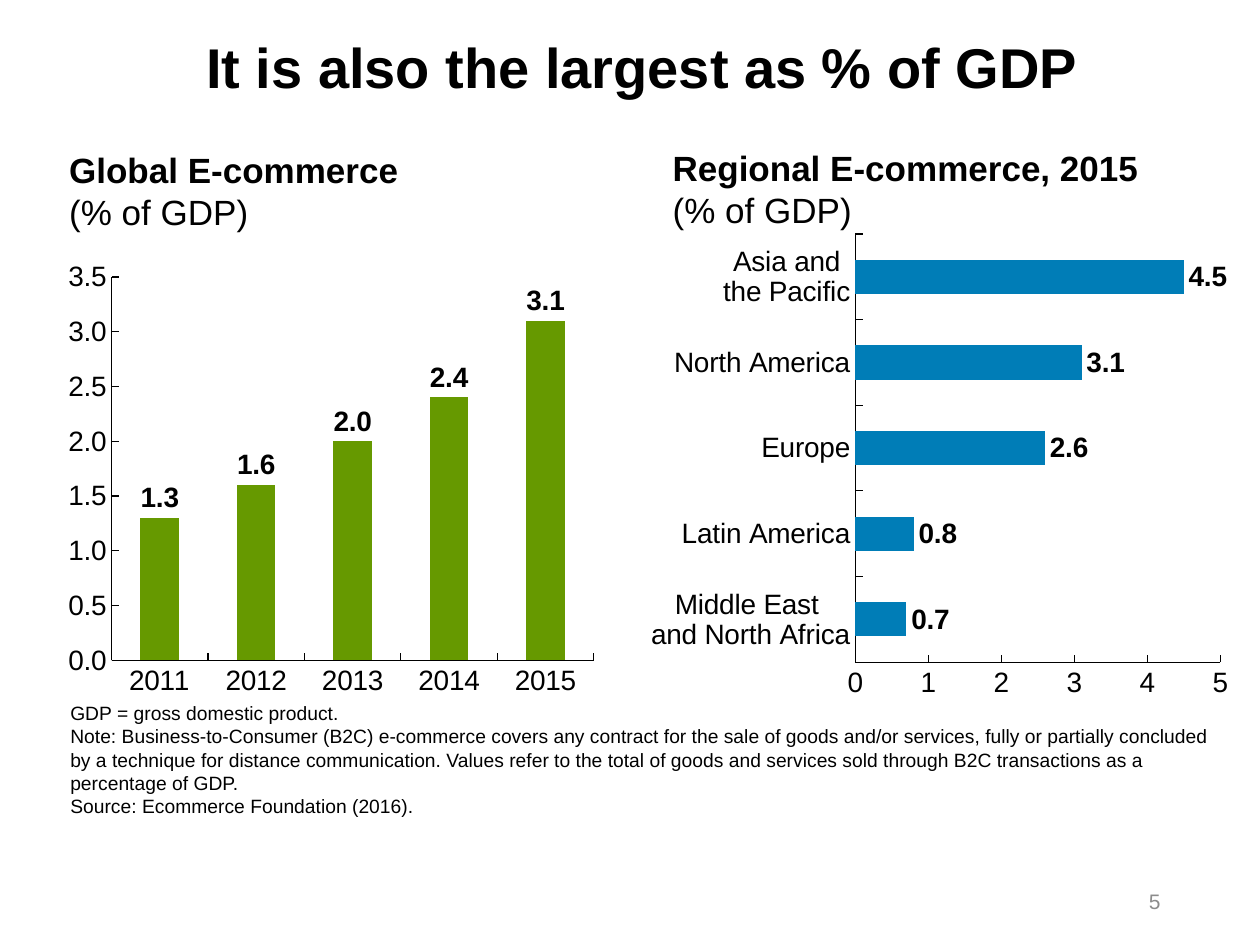
import pptx
import pptx.chart.data
import pptx.dml.color
import pptx.enum.chart
import pptx.enum.text
import pptx.oxml
import pptx.oxml.ns
import pptx.util

Pt = pptx.util.Pt
ALIGN = pptx.enum.text.PP_ALIGN
ANCHOR = pptx.enum.text.MSO_ANCHOR
CHART = pptx.enum.chart.XL_CHART_TYPE
LABEL = pptx.enum.chart.XL_LABEL_POSITION
TICK = pptx.enum.chart.XL_TICK_MARK

FONT = "Arial"
BLACK = "000000"
TITLE = "It is also the largest as % of GDP"
NOTES = [
    "GDP = gross domestic product.",
    "Note: Business-to-Consumer (B2C) e-commerce covers any contract for the sale of goods "
    "and/or services, fully or partially concluded by a technique for distance communication. "
    "Values refer to the total of goods and services sold through B2C transactions as a "
    "percentage of GDP.",
    "Source: Ecommerce Foundation (2016).",
]
PANELS = [
    {
        "heading": ["Global E-commerce", "(% of GDP)"],
        "heading_box": (32.4, 81.4, 327.6, 55.4),
        "kind": CHART.COLUMN_CLUSTERED,
        "box": (32.4, 145.4, 313.2, 257.8),
        "plot": {"x": 0.1, "y": 0.05, "w": 0.88, "h": 0.85},
        "values": {"2011": 1.3, "2012": 1.6, "2013": 2.0, "2014": 2.4, "2015": 3.1},
        "colour": "669900",
        "top": 3.5,
        "step": 0.5,
        "axis_format": "#,##0.0",
    },
    {
        "heading": ["Regional E-commerce, 2015", "(% of GDP)"],
        "heading_box": (377.3, 79.9, 329, 55.4),
        "kind": CHART.BAR_CLUSTERED,
        "box": (360, 128.2, 347.8, 275),
        "plot": {"x": 0.37, "y": 0.02, "w": 0.6, "h": 0.89},
        "values": {
            "Middle East\n and North Africa": 0.7,
            "Latin America": 0.8,
            "Europe": 2.6,
            "North America": 3.1,
            "Asia and\nthe Pacific": 4.5,
        },
        "colour": "007DB7",
        "top": 5,
        "step": 1,
        "axis_format": "0",
    },
]


def rgb(colour):
    return pptx.dml.color.RGBColor.from_string(colour)


def style(font, size, colour=BLACK, bold=False):
    font.name = FONT
    font.size = Pt(size)
    font.bold = bold
    font.color.rgb = rgb(colour)


def add_text(slide, box, lines, size, colour=BLACK, bold_first=False, align=ALIGN.LEFT):
    frame = slide.shapes.add_textbox(*map(Pt, box)).text_frame
    frame.word_wrap = True
    frame.text = "\n".join(lines)
    for index, paragraph in enumerate(frame.paragraphs):
        paragraph.alignment = align
        for run in paragraph.runs:
            style(run.font, size, colour, bold_first and index == 0)
    return frame


def place_plot(chart, plot):
    plot_area = chart.plots[0]._element.getparent()
    for old in plot_area.findall(pptx.oxml.ns.qn("c:layout")):
        plot_area.remove(old)
    modes = '<c:layoutTarget val="inner"/><c:xMode val="edge"/><c:yMode val="edge"/>'
    sizes = "".join(f'<c:{side} val="{share}"/>' for side, share in plot.items())
    plot_area.insert(0, pptx.oxml.parse_xml(
        f'<c:layout {pptx.oxml.ns.nsdecls("c")}><c:manualLayout>{modes}{sizes}'
        "</c:manualLayout></c:layout>"))


def add_panel_chart(slide, panel):
    data = pptx.chart.data.CategoryChartData(number_format="#,##0.0")
    data.categories = list(panel["values"])
    data.add_series("Series 1", list(panel["values"].values()))
    chart = slide.shapes.add_chart(panel["kind"], *map(Pt, panel["box"]), data).chart
    chart.has_title = False
    chart.has_legend = False
    style(chart.font, 16)
    place_plot(chart, panel["plot"])

    for axis in (chart.category_axis, chart.value_axis):
        axis.has_major_gridlines = False
        axis.major_tick_mark = TICK.INSIDE
        axis.minor_tick_mark = TICK.NONE
        axis.format.line.color.rgb = rgb(BLACK)
        axis.format.line.width = Pt(0.75)
        style(axis.tick_labels.font, 16)
    scale = chart.value_axis
    scale.minimum_scale = 0
    scale.maximum_scale = panel["top"]
    scale.major_unit = panel["step"]
    scale.tick_labels.number_format = panel["axis_format"]
    scale.tick_labels.number_format_is_linked = False

    bars = chart.plots[0]
    bars.vary_by_categories = False
    bars.gap_width = 150
    fill = bars.series[0].format.fill
    fill.solid()
    fill.fore_color.rgb = rgb(panel["colour"])
    labels = bars.series[0].data_labels
    labels.show_value = True
    labels.number_format = "#,##0.0"
    labels.number_format_is_linked = False
    labels.position = LABEL.OUTSIDE_END
    style(labels.font, 16, bold=True)


def main():
    deck = pptx.Presentation()
    deck.slide_width, deck.slide_height = Pt(720), Pt(540)
    slide = deck.slides.add_slide(deck.slide_layouts[5])

    title = slide.shapes.title
    title.left, title.top, title.width, title.height = map(Pt, (56.9, 7.9, 620.6, 64.1))
    title.text_frame.text = TITLE
    title.text_frame.vertical_anchor = ANCHOR.MIDDLE
    heading = title.text_frame.paragraphs[0]
    heading.alignment = ALIGN.CENTER
    heading.line_spacing = 0.9
    style(heading.runs[0].font, 32, bold=True)

    for panel in PANELS:
        add_panel_chart(slide, panel)
        add_text(slide, panel["heading_box"], panel["heading"], 20, bold_first=True)
    add_text(slide, (33.1, 397.4, 667.4, 74.2), NOTES, 11)
    page_number = add_text(slide, (608.4, 500.4, 61.9, 28.8), ["5"], 12, "8C8C8C",
                           align=ALIGN.RIGHT)
    page_number.vertical_anchor = ANCHOR.MIDDLE
    deck.save("out.pptx")


if __name__ == "__main__":
    main()
